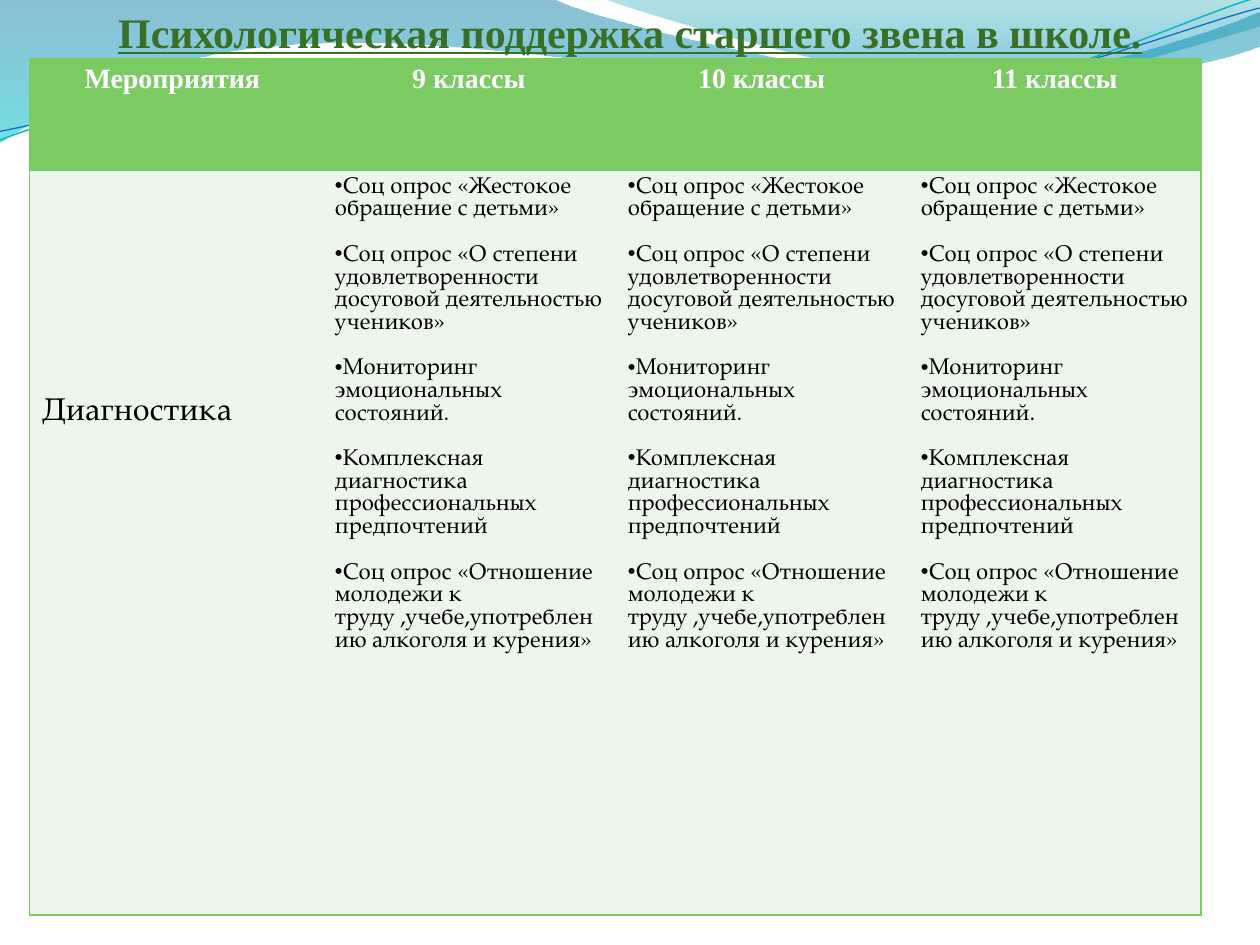
import pptx
import pptx.dml.color
import pptx.enum.text
import pptx.oxml.ns
import pptx.util
from lxml import etree

Pt = pptx.util.Pt
RGB = pptx.dml.color.RGBColor
qn = pptx.oxml.ns.qn
PP_ALIGN = pptx.enum.text.PP_ALIGN

GREEN = RGB(0x7C, 0xCA, 0x62)
PALE_GREEN = RGB(0xEC, 0xF6, 0xEA)
DARK_GREEN = RGB(0x38, 0x70, 0x26)
WHITE = RGB(0xFF, 0xFF, 0xFF)
BLACK = RGB(0, 0, 0)
DEEP_BLUE = RGB(0x00, 0x74, 0xA1)
CYAN = RGB(0x00, 0xC6, 0xCF)
TEAL = RGB(0x00, 0xA1, 0xA9)
SEA_BLUE = RGB(0x00, 0x8B, 0xBF)
TURQUOISE = RGB(0x0A, 0xB8, 0xBF)
BLUE = RGB(0x0F, 0x6F, 0xC6)

SERIF = "Times New Roman"
BODY = "TeX Gyre Pagella"
NO_TABLE_STYLE = "{2D5ABB26-0587-4C30-8999-92F81FD0307C}"

HEADINGS = ["Мероприятия ", "9 классы", "10 классы", "11 классы"]
ACTIVITIES = [
    "Соц опрос «Жестокое обращение с детьми»",
    "Соц опрос «О степени удовлетворенности досуговой деятельностью учеников»",
    "Мониторинг эмоциональных состояний.",
    "Комплексная диагностика профессиональных предпочтений",
    "Соц опрос «Отношение молодежи к труду ,учебе,употреблению алкоголя и курения»",
]

# Wave outlines in points: a pair is a corner, six numbers are a Bézier curve
LEFT_WAVE = [(0, 0), (317, -0.5), (343, 12, 478, 45, 546, 45), (614, 45, 690, 19, 720, 6.5),
             (720.5, 26), (708, 32, 626, 54.5, 537, 54), (448, 54, 275, 20, 185, 24.5),
             (93, 26, 33, 60, -0.5, 81.5)]
RIGHT_WAVE = [(345, -0.5), (366, 8, 491, 45, 554, 47), (616, 49.5, 692, 23, 720, 15), (720, 0)]
UPPER_STRAND = [(0, 80), (34.5, 67, 114, 41, 199, 37.5), (284, 34, 427, 64, 513, 57.5),
                (600, 51, 675, 11, 718.5, -1.5)]
LOWER_STRAND = [(0, 75), (34, 69, 118, 44, 204, 40.5), (290, 37, 430, 60.5, 516, 54),
                (602, 48, 677.5, 15, 720, 4.5)]


def add_curve(slide, outline, close):
    """Join the ends of all segments, then bend those that have control points."""
    ends = [(Pt(segment[-2]), Pt(segment[-1])) for segment in outline]
    builder = slide.shapes.build_freeform(*ends[0], scale=1.0)
    builder.add_line_segments(ends[1:], close=close)
    curve = builder.convert_to_shape()
    curve.shadow.inherit = False
    straight_lines = list(curve._element.iter(qn("a:lnTo")))
    for line, segment in zip(straight_lines, outline[1:]):
        if len(segment) == 6:
            bend = etree.Element(qn("a:cubicBezTo"))
            for x, y in zip(segment[::2], segment[1::2]):
                etree.SubElement(bend, qn("a:pt"), x=str(Pt(x) - curve.left),
                                 y=str(Pt(y) - curve.top))
            line.getparent().replace(line, bend)
    return curve


def add_wave(slide, outline, stops):
    """Add a filled wave; each stop is position, colour and opacity in percent."""
    wave = add_curve(slide, outline, close=True)
    wave.line.fill.background()
    wave.fill.gradient()
    wave.fill.gradient_angle = 270
    for stop, (position, color, _) in zip(wave.fill.gradient_stops, stops):
        stop.position = position
        stop.color.rgb = color
    colors = wave._element.spPr.iter(qn("a:srgbClr"))
    for color_element, (_, _, opacity) in zip(colors, stops):
        etree.SubElement(color_element, qn("a:alpha"), val=str(opacity * 1000))


def add_strand(slide, outline, color, width):
    strand = add_curve(slide, outline, close=False)
    strand.fill.background()
    strand.line.color.rgb = color
    strand.line.width = Pt(width)


def format_runs(paragraph, font_name, size, color, bold=False, underline=False):
    for run in paragraph.runs:
        run.font.name = font_name
        run.font.size = Pt(size)
        run.font.color.rgb = color
        run.font.bold = bold
        run.font.underline = underline


def place_title(slide, text):
    title = slide.shapes.title
    title.left, title.top, title.width, title.height = Pt(0), Pt(0), Pt(720), Pt(36)
    title.text_frame.text = text
    title.text_frame.vertical_anchor = pptx.enum.text.MSO_ANCHOR.MIDDLE
    paragraph = title.text_frame.paragraphs[0]
    paragraph.alignment = PP_ALIGN.CENTER
    format_runs(paragraph, SERIF, 24, DARK_GREEN, bold=True, underline=True)
    slide.shapes._spTree.append(title._element)  # in front of the waves


def style_cell(cell, fill, sides):
    """Fill the cell and draw its border on the given sides."""
    properties = cell._tc.get_or_add_tcPr()
    for side in sides:
        border = etree.SubElement(properties, qn(f"a:ln{side}"), w=str(Pt(1)))
        solid = etree.SubElement(border, qn("a:solidFill"))
        etree.SubElement(solid, qn("a:srgbClr"), val=str(GREEN))
    cell.fill.solid()
    cell.fill.fore_color.rgb = fill


def fill_heading(cell, text):
    cell.margin_left = cell.margin_right = Pt(5)
    cell.margin_top = cell.margin_bottom = Pt(0)
    cell.text_frame.text = text
    paragraph = cell.text_frame.paragraphs[0]
    paragraph.alignment = PP_ALIGN.CENTER
    paragraph.line_spacing = 1.15
    format_runs(paragraph, SERIF, 16, WHITE, bold=True)


def fill_activities(cell, activities):
    cell.text_frame.text = "\n".join(activities)
    for paragraph in cell.text_frame.paragraphs:
        paragraph.space_after = Pt(13)
        format_runs(paragraph, BODY, 13, BLACK)
        properties = paragraph._p.get_or_add_pPr()
        properties.set("marL", "0")
        properties.set("indent", "0")
        etree.SubElement(properties, qn("a:buChar"), char="•")


def add_support_table(slide):
    frame = slide.shapes.add_table(2, len(HEADINGS), Pt(16.8), Pt(33.5), Pt(669.6), Pt(489.5))
    table = frame.table
    table._tbl.tblPr.find(qn("a:tableStyleId")).text = NO_TABLE_STYLE
    table.horz_banding = False
    for row, height in zip(table.rows, (64, 425.5)):
        row.height = Pt(height)
    for column in table.columns:
        column.width = Pt(167.4)

    outer_sides = {0: "L", len(HEADINGS) - 1: "R"}
    for index, heading in enumerate(HEADINGS):
        sides = outer_sides.get(index, "") + "TB"
        for row, fill in enumerate((GREEN, PALE_GREEN)):
            style_cell(table.cell(row, index), fill, sides)
        fill_heading(table.cell(0, index), heading)
        if index:
            fill_activities(table.cell(1, index), ACTIVITIES)

    # Kind of activity, set level with the middle of the lists
    kind = table.cell(1, 0)
    kind.margin_top = Pt(130)
    kind.text_frame.text = "Диагностика"
    format_runs(kind.text_frame.paragraphs[0], BODY, 18, BLACK)


def main():
    presentation = pptx.Presentation()
    presentation.slide_width, presentation.slide_height = Pt(720), Pt(540)
    slide = presentation.slides.add_slide(presentation.slide_layouts[5])

    # Decorative waves
    add_wave(slide, LEFT_WAVE, [(0, DEEP_BLUE, 45), (1, CYAN, 55)])
    add_wave(slide, RIGHT_WAVE, [(0, TEAL, 30), (0.8, SEA_BLUE, 45)])
    add_strand(slide, UPPER_STRAND, TURQUOISE, 0.85)
    add_strand(slide, LOWER_STRAND, BLUE, 0.75)

    # Title and table
    place_title(slide, "Психологическая поддержка старшего звена в школе.")
    add_support_table(slide)
    presentation.save("out.pptx")


if __name__ == "__main__":
    main()
